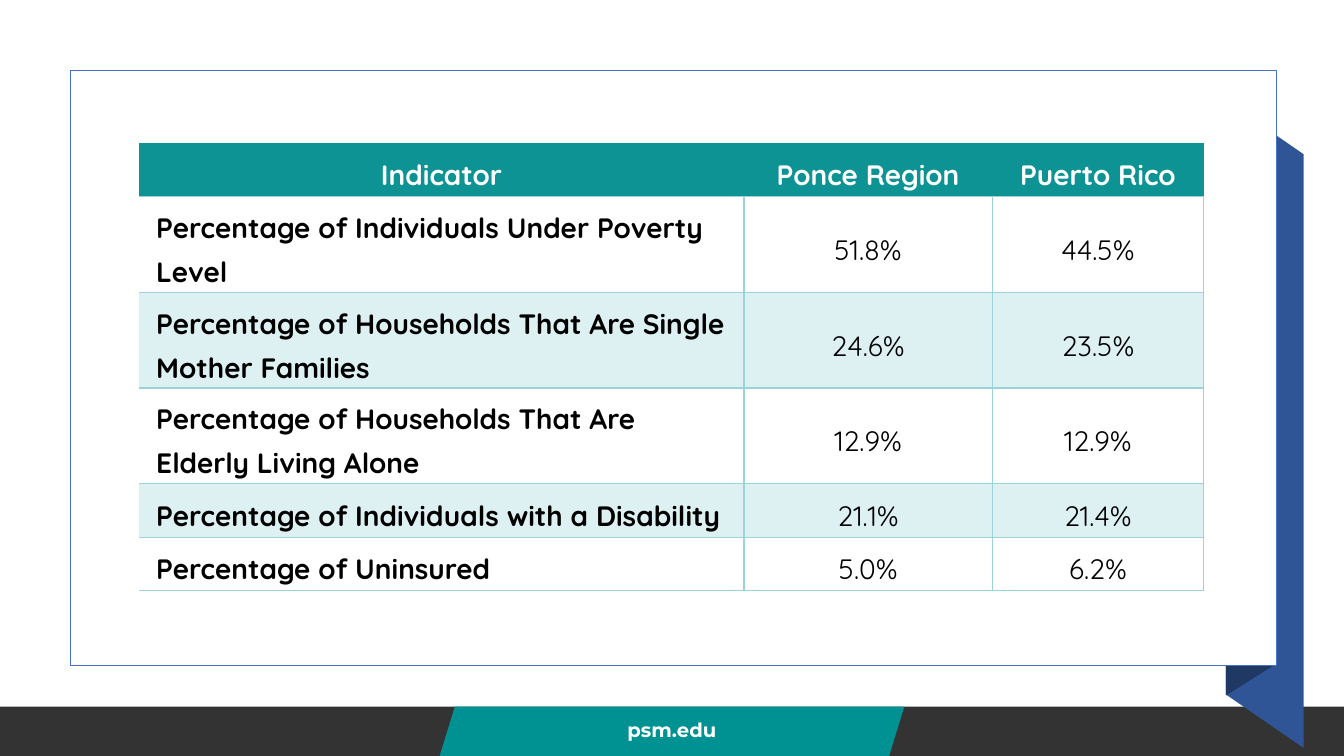
from lxml import etree
from pptx import Presentation
from pptx.dml.color import RGBColor
from pptx.enum import shapes, text
from pptx.oxml.ns import qn
from pptx.util import Inches, Pt


def paint(fill, colour):
    fill.solid()
    fill.fore_color.rgb = RGBColor.from_string(colour)


def write(frame, wording, align, spacing, **font):
    para = frame.paragraphs[0]
    para.alignment = align
    para.line_spacing = spacing
    span = para.add_run()
    span.text = wording
    span.font.color.rgb = RGBColor.from_string(font.pop("colour"))
    for name, value in font.items():
        setattr(span.font, name, value)


deck = Presentation()
deck.slide_width, deck.slide_height = Inches(13.33), Inches(7.5)
page = deck.slides.add_slide(deck.slide_layouts[6])
left, center = text.PP_ALIGN.LEFT, text.PP_ALIGN.CENTER

footer = page.shapes.add_shape(
    shapes.MSO_SHAPE.RECTANGLE, Inches(0), Inches(7.01), Inches(13.33), Inches(0.49))
paint(footer.fill, "333333")

tab = page.shapes.add_shape(
    shapes.MSO_SHAPE.PARALLELOGRAM, Inches(4.36), Inches(7.01), Inches(4.61), Inches(0.49))
tab.adjustments[0] = 0.31
paint(tab.fill, "009193")
tab.text_frame.vertical_anchor = text.MSO_ANCHOR.MIDDLE
write(tab.text_frame, "psm.edu", center, 0.9,
      name="Montserrat", size=Pt(14), bold=True, colour="FFFFFF")

ribbon_parts = [
    ("2F5597", [(12.93, 7.42), (12.16, 6.89), (12.16, 1), (12.93, 1.53)]),
    ("203864", [(12.62, 6.61), (12.16, 6.9), (12.16, 1), (12.62, 0.7)]),
]
ribbon = []
for colour, points in ribbon_parts:
    corners = [(Inches(x), Inches(y)) for x, y in points]
    outline = page.shapes.build_freeform(*corners[0])
    outline.add_line_segments(corners[1:], close=True)
    part = outline.convert_to_shape()
    paint(part.fill, colour)
    ribbon.append(part)

card = page.shapes.add_shape(
    shapes.MSO_SHAPE.RECTANGLE, Inches(0.7), Inches(0.7), Inches(11.96), Inches(5.9))
paint(card.fill, "FFFFFF")
paint(card.line.fill, "4472C4")
card.line.width = Pt(1)
card.shadow.inherit = False

for shape in [footer, tab, *ribbon]:
    shape.line.fill.background()
    shape.shadow.inherit = False

rows = [
    ("Indicator", "Ponce Region", "Puerto Rico"),
    ("Percentage of Individuals Under Poverty Level", "51.8%", "44.5%"),
    ("Percentage of Households That Are Single Mother Families", "24.6%", "23.5%"),
    ("Percentage of Households That Are Elderly Living Alone", "12.9%", "12.9%"),
    ("Percentage of Individuals with a Disability", "21.1%", "21.4%"),
    ("Percentage of Uninsured", "5.0%", "6.2%"),
]
widths = [6, 2.46, 2.1]
heights = [0.53, 0.95, 0.95, 0.95, 0.53, 0.53]
table = page.shapes.add_table(
    len(rows), len(widths), Inches(1.38), Inches(1.42),
    Inches(sum(widths)), Inches(sum(heights))).table
table.horz_banding = False
for column, width in zip(table.columns, widths):
    column.width = Inches(width)
for row, height in zip(table.rows, heights):
    row.height = Inches(height)

cell_format = {
    "margin_left": Inches(0.17), "margin_right": Inches(0.17),
    "margin_top": Inches(0.02), "margin_bottom": Inches(0),
    "vertical_anchor": text.MSO_ANCHOR.MIDDLE,
}
for r, values in enumerate(rows):
    header = r == 0
    for c, value in enumerate(values):
        cell = table.cell(r, c)
        for name, setting in cell_format.items():
            setattr(cell, name, setting)
        label = c == 0
        write(cell.text_frame, value, left if label and not header else center, 1.25,
              name="Quicksand", size=Pt(20), bold=header or label,
              colour="FFFFFF" if header else "000000")

        borders = {
            "lnL": 0 if header or label else 1,
            "lnR": 0 if header else 1,
            "lnT": 0 if header else 1.5 if r == 1 else 1,
            "lnB": 1.5 if header else 1,
        }
        properties = cell._tc.get_or_add_tcPr()
        for side, points in borders.items():
            line = etree.SubElement(properties, qn("a:" + side), w=str(Pt(points)))
            if points:
                solid = etree.SubElement(line, qn("a:solidFill"))
                etree.SubElement(solid, qn("a:srgbClr"), val="9AD3D9")
            else:
                etree.SubElement(line, qn("a:noFill"))

        if header:
            paint(cell.fill, "0E9394")
        elif r % 2 == 0:
            paint(cell.fill, "DDF0F2")
        else:
            cell.fill.background()

deck.save("out.pptx")
